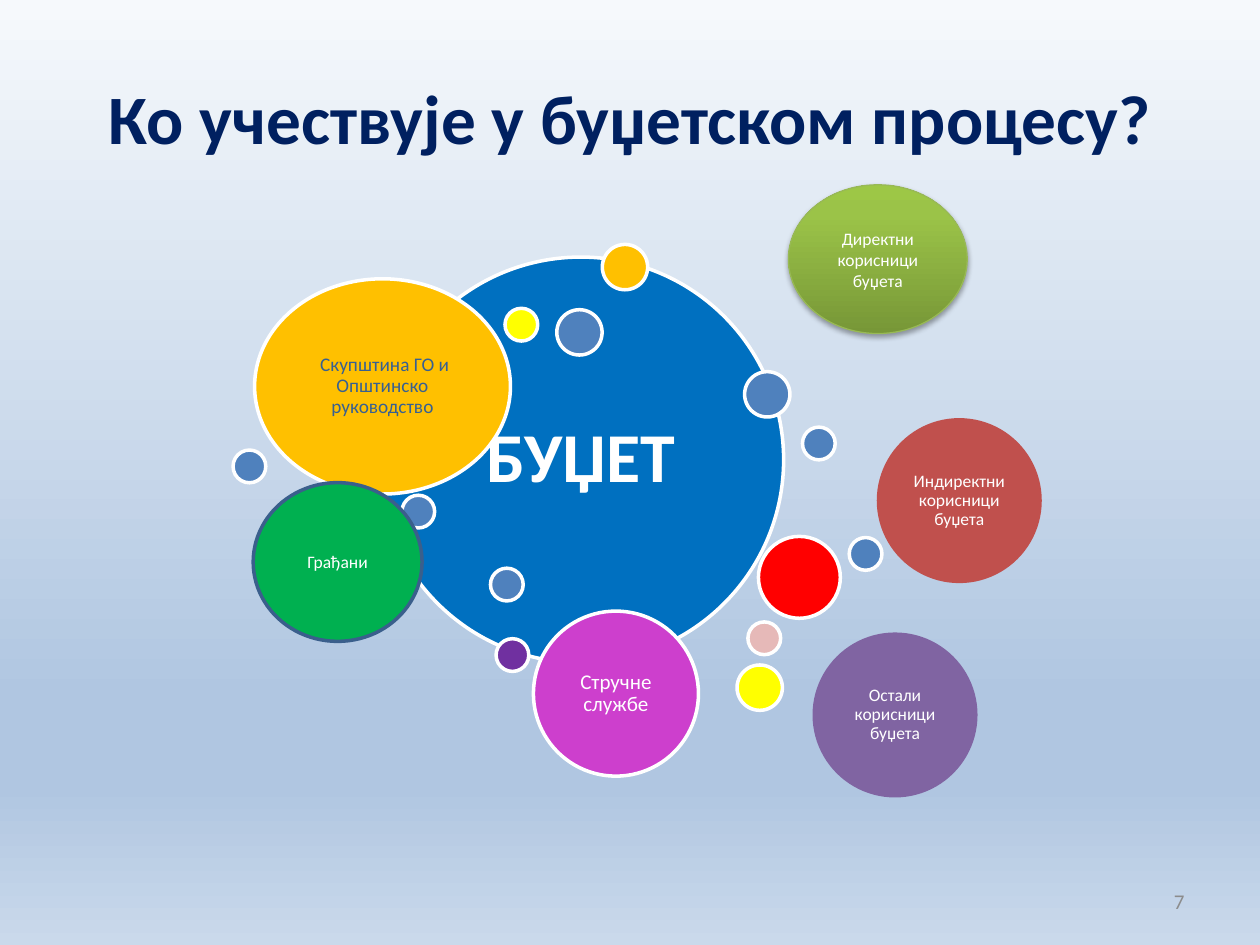
from lxml.etree import SubElement
from pptx import Presentation
from pptx.dml.color import RGBColor as RGB
from pptx.enum.shapes import MSO_SHAPE as SHAPE
from pptx.enum.text import MSO_ANCHOR as ANCHOR, PP_ALIGN as ALIGN
from pptx.oxml.ns import qn
from pptx.util import Pt

FONT = "Calibri"
WHITE = RGB(0xFF, 0xFF, 0xFF)
NAVY = RGB(0x00, 0x20, 0x60)
GREY = RGB(0x8C, 0x8C, 0x8C)
BLUE = RGB(0x00, 0x70, 0xC0)
STEEL = RGB(0x4F, 0x81, 0xBD)
DEEP_BLUE = RGB(0x37, 0x60, 0x92)
EDGE_BLUE = RGB(0x3A, 0x5F, 0x8C)
AMBER = RGB(0xFF, 0xC0, 0x00)
YELLOW = RGB(0xFF, 0xFF, 0x00)
RED = RGB(0xFF, 0x00, 0x00)
BRICK = RGB(0xC0, 0x50, 0x4D)
PINK = RGB(0xE6, 0xB9, 0xB8)
PURPLE = RGB(0x70, 0x30, 0xA0)
VIOLET = RGB(0x80, 0x64, 0xA2)
MAGENTA = RGB(0xCD, 0x3F, 0xCD)
GREEN = RGB(0x00, 0xB0, 0x50)
LIME = RGB(0x9B, 0xC3, 0x48)
LIME_EDGE = RGB(0x98, 0xB9, 0x55)
SKY_STOPS = [(0, "F6F9FC"), (74, "B0C6E1"), (83, "B0C6E1"), (100, "CAD9EB")]
LIME_STOPS = [(0, "779737"), (80, "9BC348"), (100, "9DC746")]

SMALL, MEDIUM, LARGE = 18.7, 25.9, 46.8  # dot diameters
BUBBLE = 94.3  # diameter of the round participant bubbles


def set_gradient(fill, element, stops, angle):
    """Give a fill any number of (percent, hex) stops."""
    fill.gradient()
    grad = element.find(".//" + qn("a:gradFill"))
    for child in list(grad):
        grad.remove(child)
    gs_list = SubElement(grad, qn("a:gsLst"))
    for pos, color in stops:
        gs = SubElement(gs_list, qn("a:gs"), pos=str(pos * 1000))
        SubElement(gs, qn("a:srgbClr"), val=color)
    SubElement(grad, qn("a:lin"), ang=str(angle * 60000), scaled="0")


def add_shadow(sp):
    """Soft shadow straight below a shape."""
    effects = sp._element.spPr.find(qn("a:effectLst"))
    shadow = SubElement(effects, qn("a:outerShdw"), blurRad=str(Pt(3.1)),
                        dist=str(Pt(1.8)), dir="5400000", rotWithShape="0")
    color = SubElement(shadow, qn("a:srgbClr"), val="000000")
    SubElement(color, qn("a:alpha"), val="35000")


def write(sp, text, size, color, bold=False, align=ALIGN.CENTER, spacing=1.0, inset=None):
    tf = sp.text_frame
    tf.word_wrap = True
    tf.vertical_anchor = ANCHOR.MIDDLE
    if inset is not None:
        for side in ("left", "top", "right", "bottom"):
            setattr(tf, "margin_" + side, Pt(inset))
    p = tf.paragraphs[0]
    p.alignment, p.line_spacing = align, spacing
    r = p.add_run()
    r.text = text
    for name, value in {"name": FONT, "size": Pt(size), "bold": bold}.items():
        setattr(r.font, name, value)
    r.font.color.rgb = color


def add_ellipse(s, x, y, w, h, fill, line=WHITE, weight=2):
    sp = s.shapes.add_shape(SHAPE.OVAL, Pt(x), Pt(y), Pt(w), Pt(h))
    sp.shadow.inherit = False
    sp.fill.solid()
    sp.fill.fore_color.rgb = fill
    if line is None:
        sp.line.fill.background()
    else:
        sp.line.color.rgb = line
        sp.line.width = Pt(weight)
    return sp


def add_dots(s, dots):
    for x, y, size, color in dots:
        add_ellipse(s, x, y, size, size, color)


def add_bubble(s, x, y, w, h, fill, text, size, color=WHITE, line=WHITE, inset=3, bold=False):
    sp = add_ellipse(s, x, y, w, h, fill, line)
    write(sp, text, size, color, bold, spacing=0.9, inset=inset)


def main():
    prs = Presentation()
    prs.slide_width, prs.slide_height = Pt(720), Pt(540)
    s = prs.slides.add_slide(prs.slide_layouts[5])
    set_gradient(s.background.fill, s._element, SKY_STOPS, 90)

    # Title and page number
    title = s.shapes.title
    title.left, title.top, title.width, title.height = Pt(36), Pt(21.6), Pt(648), Pt(90)
    write(title, "Ко учествује у буџетском процесу?", 39.6, NAVY, bold=True)
    number = s.shapes.add_textbox(Pt(516), Pt(500.5), Pt(168), Pt(28.8))
    write(number, "7", 12, GREY, align=ALIGN.RIGHT)

    # Budget circle with the participants and dots around it, back to front
    add_bubble(s, 216, 146.9, 231.8, 231.8, BLUE, "БУЏЕТ", 40, inset=12.2, bold=True)
    add_dots(s, [
        (344.2, 139.7, MEDIUM, AMBER),
        (283.5, 365, SMALL, PURPLE),
        (458.6, 244.1, SMALL, STEEL),
        (421.2, 380, MEDIUM, YELLOW),
        (288.6, 176.2, SMALL, YELLOW),
        (229.7, 283, SMALL, STEEL),
    ])
    add_bubble(s, 145.5, 159.3, 146.2, 123, AMBER,
               " Скупштина ГО и Општинско руководство", 11, DEEP_BLUE, inset=3.6)
    add_dots(s, [
        (318.2, 177, MEDIUM, STEEL),
        (433.4, 306.5, LARGE, RED),
    ])
    add_bubble(s, 464.3, 361.4, BUBBLE, BUBBLE, VIOLET, "Остали корисници буџета", 10, line=None)
    add_dots(s, [
        (425.5, 212.4, MEDIUM, STEEL),
        (133.2, 257.2, SMALL, STEEL),
        (280.3, 324.7, SMALL, STEEL),
    ])
    add_bubble(s, 501, 238.9, BUBBLE, BUBBLE, BRICK, "Индиректни корисници буџета", 10, line=None)
    add_dots(s, [(485.3, 307.2, SMALL, STEEL)])
    add_bubble(s, 304.8, 349.2, BUBBLE, BUBBLE, MAGENTA, "Стручне службе", 12, inset=3.6)
    add_dots(s, [(427.4, 355.4, SMALL, PINK)])

    # Citizens
    citizens = add_ellipse(s, 144.7, 275.8, 96.5, 90.7, GREEN, EDGE_BLUE)
    write(citizens, "Грађани", 10, WHITE)

    # Direct users, with gradient and shadow
    direct = add_ellipse(s, 450.5, 105.6, 102.2, 85, LIME, LIME_EDGE, 0.75)
    set_gradient(direct.fill, direct._element, LIME_STOPS, 270)
    add_shadow(direct)
    write(direct, "Директни корисници буџета", 10, WHITE)

    prs.save("out.pptx")


if __name__ == "__main__":
    main()
